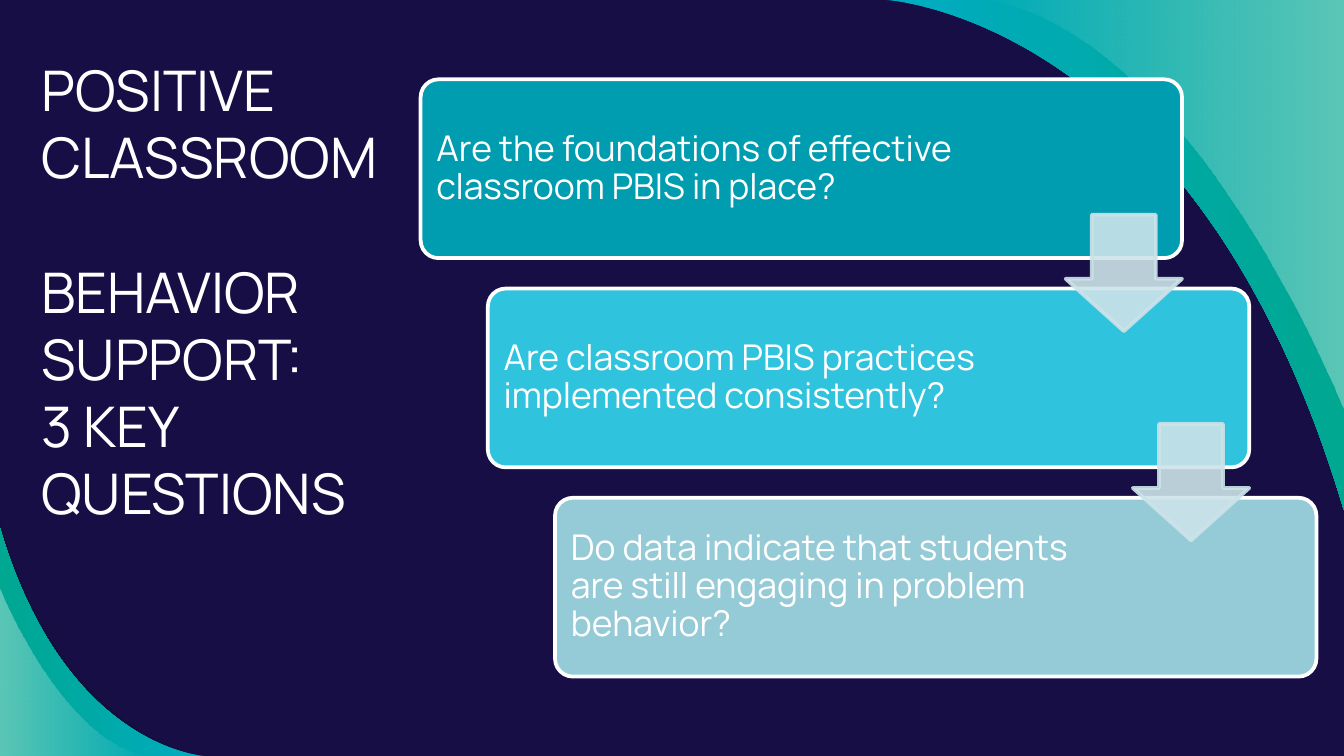
from copy import deepcopy
from dataclasses import dataclass

from lxml.etree import SubElement as Sub
from pptx import Presentation
from pptx.dml.color import RGBColor as Rgb
from pptx.enum.shapes import MSO_SHAPE as Form
from pptx.enum.text import MSO_ANCHOR as Anchor, MSO_AUTO_SIZE as Fit, PP_ALIGN as Align
from pptx.oxml.ns import qn
from pptx.util import Cm, Pt


@dataclass(frozen=True)
class Theme:
    back: str = "160E44"
    shade: str = "12102F"
    blue: str = "00ACC2"
    green: str = "00A791"
    white: str = "FFFFFF"
    arrow: str = "CCE3E9"
    cards: tuple = ("009CB0", "30C3DE", "95CAD7")
    face: str = "Manrope"
    head: int = 30
    text: int = 19
    line: int = 2


THEME = Theme()
TITLE = ["POSITIVE CLASSROOM ", "BEHAVIOR SUPPORT: ", "3 KEY ", "QUESTIONS"]
ASKS = [
    "Are the foundations of effective classroom PBIS in place?",
    "Are classroom PBIS practices implemented consistently?",
    "Do data indicate that students are still engaging in problem behavior?",
]
# Control points of the corner curves, as shares of their box
EDGE = [(0, 0), (0.32, 0.97), (1, 1), (1, 1)]
GLOW = [(0, 0), (0, 0), (0.42, 0.94), (1, 1)]


def color(hue):
    return Rgb.from_string(hue)


def fade(node, share):
    """Set the opacity, in percent, of the colour inside a fill or stop."""
    Sub(next(node.iter(qn("a:srgbClr"))), qn("a:alpha"), val=str(share * 1000))


def style(font, size):
    for key, val in {"name": THEME.face, "size": Pt(size)}.items():
        setattr(font, key, val)
    font.color.rgb = color(THEME.white)


def setup(frame, pad, anchor):
    vals = {"word_wrap": True, "auto_size": Fit.NONE, "vertical_anchor": anchor}
    vals |= {f"margin_{side}": Cm(pad) for side in ("left", "top", "right", "bottom")}
    for key, val in vals.items():
        setattr(frame, key, val)


def bend(shape):
    """Turn the first three line segments into one cubic curve."""
    lines = list(shape._element.iter(qn("a:lnTo")))[:3]
    route = lines[0].getparent()
    curve = Sub(route, qn("a:cubicBezTo"))
    lines[0].addprevious(curve)
    for line in lines:
        curve.append(line[0])
        route.remove(line)


def swoosh(slide, box, ctrl, turned=False):
    """Fill the corner under a curve; turned puts it at the top right."""
    left, top, wide, high = box
    dots = ctrl + [(0, 1)]
    if turned:
        dots = [(1 - x, 1 - y) for x, y in dots]
    dots = [(Cm(left + x * wide), Cm(top + y * high)) for x, y in dots]
    pen = slide.shapes.build_freeform(*dots[0])
    pen.add_line_segments(dots[1:], close=True)
    shape = pen.convert_to_shape()
    bend(shape)
    shape.shadow.inherit = False
    shape.line.fill.background()
    return shape


def blend(shape, hues, turned, fades=()):
    fill = shape.fill
    fill.gradient()
    fill.gradient_angle = 0 if turned else 180
    for stop, hue in zip(fill.gradient_stops, hues):
        stop.color.rgb = color(hue)
    ends = shape._element.spPr.findall(".//" + qn("a:gs"))
    for end, share in zip(ends, fades):
        fade(end, share)


def corner(slide, edge, glow, turned=False):
    blend(swoosh(slide, edge, EDGE, turned), (THEME.blue, THEME.green), turned)
    blend(swoosh(slide, glow, GLOW, turned), (THEME.white, THEME.white), turned, (0, 36))


def decor(slide):
    # Dark rim behind the lower left corner
    rim = swoosh(slide, (0, 9.88, 3.96, 4.41), EDGE)
    rim.fill.solid()
    rim.fill.fore_color.rgb = color(THEME.shade)
    fade(rim.fill._xPr, 54)
    corner(slide, (0, 9.98, 3.86, 4.31), (0, 11.1, 2.82, 3.19))
    corner(slide, (16.74, 0, 8.66, 9.65), (18.52, 0, 6.88, 7.77), turned=True)


def heading(slide, box):
    title = slide.shapes.title
    for key, val in zip(("left", "top", "width", "height"), box):
        setattr(title, key, Cm(val))
    setup(title.text_frame, 0.25, Anchor.TOP)
    para = title.text_frame.paragraphs[0]
    para.alignment = Align.LEFT
    for i, words in enumerate(TITLE):
        if i:
            para.add_line_break()
        run = para.add_run()
        run.text = words
        style(run.font, THEME.head)
    # Line breaks keep the type size of the runs
    for gap in para._p.findall(qn("a:br")):
        gap.insert(0, deepcopy(run._r.rPr))


def block(slide, form, box, hue, rim, adjust):
    shape = slide.shapes.add_shape(form, *map(Cm, box))
    shape.shadow.inherit = False
    for i, val in enumerate(adjust):
        shape.adjustments[i] = val
    shape.fill.solid()
    shape.fill.fore_color.rgb = color(hue)
    shape.line.color.rgb = color(rim)
    shape.line.width = Pt(THEME.line)
    return shape


def card(slide, box, hue, words):
    left, top, _, high = box
    block(slide, Form.ROUNDED_RECTANGLE, box, hue, THEME.white, [0.1])
    label = slide.shapes.add_textbox(*map(Cm, (left + 0.1, top + 0.1, 10.73, high - 0.2)))
    setup(label.text_frame, 0.2, Anchor.MIDDLE)
    para = label.text_frame.paragraphs[0]
    para.line_spacing = 0.9
    run = para.add_run()
    run.text = words
    style(run.font, THEME.text)


def arrow(slide, box):
    shape = block(slide, Form.DOWN_ARROW, box, THEME.arrow, THEME.arrow, [0.55, 0.45])
    props = shape._element.spPr
    fade(props.find(qn("a:solidFill")), 90)
    fade(props.find(qn("a:ln")), 90)


def stairs(slide, box):
    """Cards stepping down to the right, with arrows over the gaps."""
    left, top, wide, high = box
    tall, side = 3.38, 2.2
    over, down = 1.27, (high - tall) / (len(ASKS) - 1)
    broad = wide - over * (len(ASKS) - 1)
    spots = [(left + i * over, top + i * down) for i in range(len(ASKS))]
    for (x, y), hue, words in zip(spots, THEME.cards, ASKS):
        card(slide, (x, y, broad, tall), hue, words)
    for x, y in spots[:-1]:
        arrow(slide, (x + broad - side, y + 2.56, side, side))


def main():
    deck = Presentation()
    deck.slide_width, deck.slide_height = Cm(25.4), Cm(14.29)
    slide = deck.slides.add_slide(deck.slide_layouts[5])
    slide.background.fill.solid()
    slide.background.fill.fore_color.rgb = color(THEME.back)
    decor(slide)
    heading(slide, (0.53, 0.8, 7.06, 8))
    stairs(slide, (7.95, 1.5, 16.93, 11.29))
    deck.save("out.pptx")


if __name__ == "__main__":
    main()
